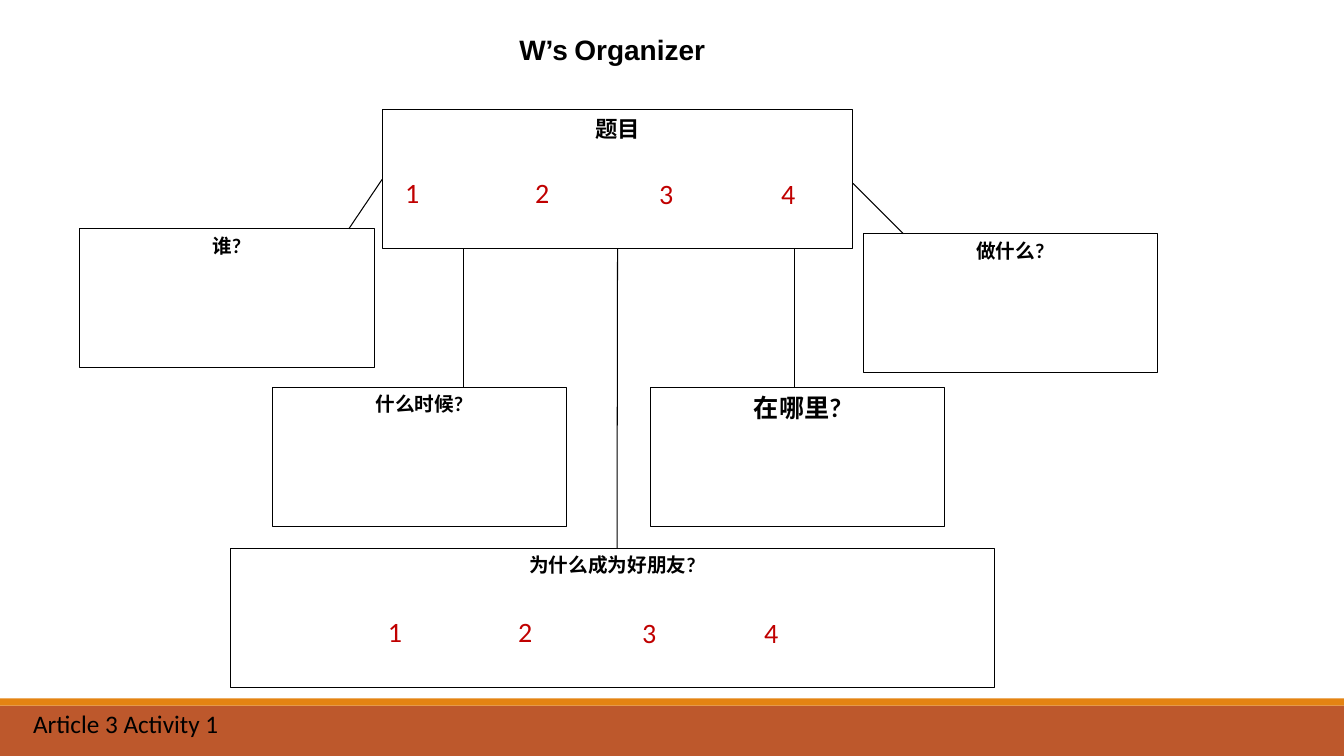
from lxml import etree
from pptx import Presentation
from pptx import util as u
from pptx.dml.color import RGBColor
from pptx.enum import shapes, text
from pptx.oxml.ns import qn

PX = 9144  # 100 px to the inch
BLACK = RGBColor(0x00, 0x00, 0x00)
WHITE = RGBColor(0xFF, 0xFF, 0xFF)
RED = RGBColor(0xC0, 0x00, 0x00)
RUST = RGBColor(0xBD, 0x58, 0x2C)
ORANGE = RGBColor(0xE4, 0x83, 0x12)

SLIDE_W, SLIDE_H = 1333, 750
BOX_W, BOX_H = 292, 138
DIGITS = [("1", 0, 0), ("2", 129, 0), ("3", 252, 1), ("4", 373, 1)]


def px(*lengths):
    return [u.Emu(n * PX) for n in lengths]


class Organizer:
    line_width = u.Pt(0.75)

    def __init__(self, slide):
        self.slide = slide

    def run(self, p, words, size, font, color=BLACK, bold=False):
        r = p.add_run()
        r.text = words
        r.font.size = u.Pt(size)
        r.font.name = font
        r.font.color.rgb = color
        r.font.bold = bold

    def rect(self, x, y, w, h, fill):
        sp = self.slide.shapes.add_shape(shapes.MSO_SHAPE.RECTANGLE, *px(x, y, w, h))
        sp.shadow.inherit = False
        sp.fill.solid()
        sp.fill.fore_color.rgb = fill
        sp.line.fill.background()
        return sp

    def box(self, x, y, label, w=BOX_W, size=14):
        """Outlined white box with its heading at the top."""
        sp = self.rect(x, y, w, BOX_H, WHITE)
        sp.line.color.rgb = BLACK
        sp.line.width = self.line_width
        tf = sp.text_frame
        tf.vertical_anchor = text.MSO_ANCHOR.TOP
        p = tf.paragraphs[0]
        p.alignment = text.PP_ALIGN.CENTER
        self.run(p, label, size, "Lato", bold=True)
        return sp

    def line(self, x1, y1, x2, y2):
        cn = self.slide.shapes.add_connector(shapes.MSO_CONNECTOR.STRAIGHT, *px(x1, y1, x2, y2))
        cn.line.color.rgb = BLACK
        cn.line.width = self.line_width
        etree.SubElement(cn.element.spPr, qn("a:effectLst"))
        return cn

    def label(self, x, y, w, h, words, size, color=BLACK, wrap=True):
        sp = self.slide.shapes.add_textbox(*px(x, y, w, h))
        tf = sp.text_frame
        tf.word_wrap = wrap
        self.run(tf.paragraphs[0], words, size, "Calibri", color)

    def digits(self, x, y):
        for digit, dx, dy in DIGITS:
            self.label(x + dx, y + dy, 90, 44, digit, 20, RED)

    def title(self, x, y, w, h, runs):
        sp = self.slide.shapes.title
        sp.left, sp.top, sp.width, sp.height = px(x, y, w, h)
        tf = sp.text_frame
        tf.word_wrap = False
        tf.auto_size = text.MSO_AUTO_SIZE.NONE
        tf.vertical_anchor = text.MSO_ANCHOR.MIDDLE
        p = tf.paragraphs[0]
        p.alignment = text.PP_ALIGN.LEFT
        for words, size in runs:
            self.run(p, words, size, "Arial", bold=True)


def main():
    prs = Presentation()
    prs.slide_width, prs.slide_height = px(SLIDE_W, SLIDE_H)
    s = Organizer(prs.slides.add_slide(prs.slide_layouts[5]))

    s.rect(0, 700, SLIDE_W, 50, RUST)
    s.rect(0, 693, SLIDE_W, 7, ORANGE)

    topic = s.box(379, 109, "题目", w=467, size=16)
    s.box(79, 227, "谁?")
    s.box(645, 384, "在哪里?", size=18)
    s.box(856, 232, "做什么?")
    s.box(270, 384, "什么时候?")
    s.box(229, 544, "为什么成为好朋友?", w=757)

    s.line(460, 247, 460, 384)
    s.line(612, 247, 612, 544).begin_connect(topic, 2)
    s.line(379, 178, 346, 227).begin_connect(topic, 1)
    s.line(788, 247, 788, 384)
    s.line(846, 182, 896, 232)

    s.label(23, 698, 206, 40, "Article 3 Activity 1", 18, wrap=False)
    s.title(505, 27, 206, 44, [("W’s", 20), (" ", 16), ("Organizer", 20)])
    s.digits(375, 605)
    s.digits(392, 169)

    prs.save("out.pptx")


if __name__ == "__main__":
    main()
